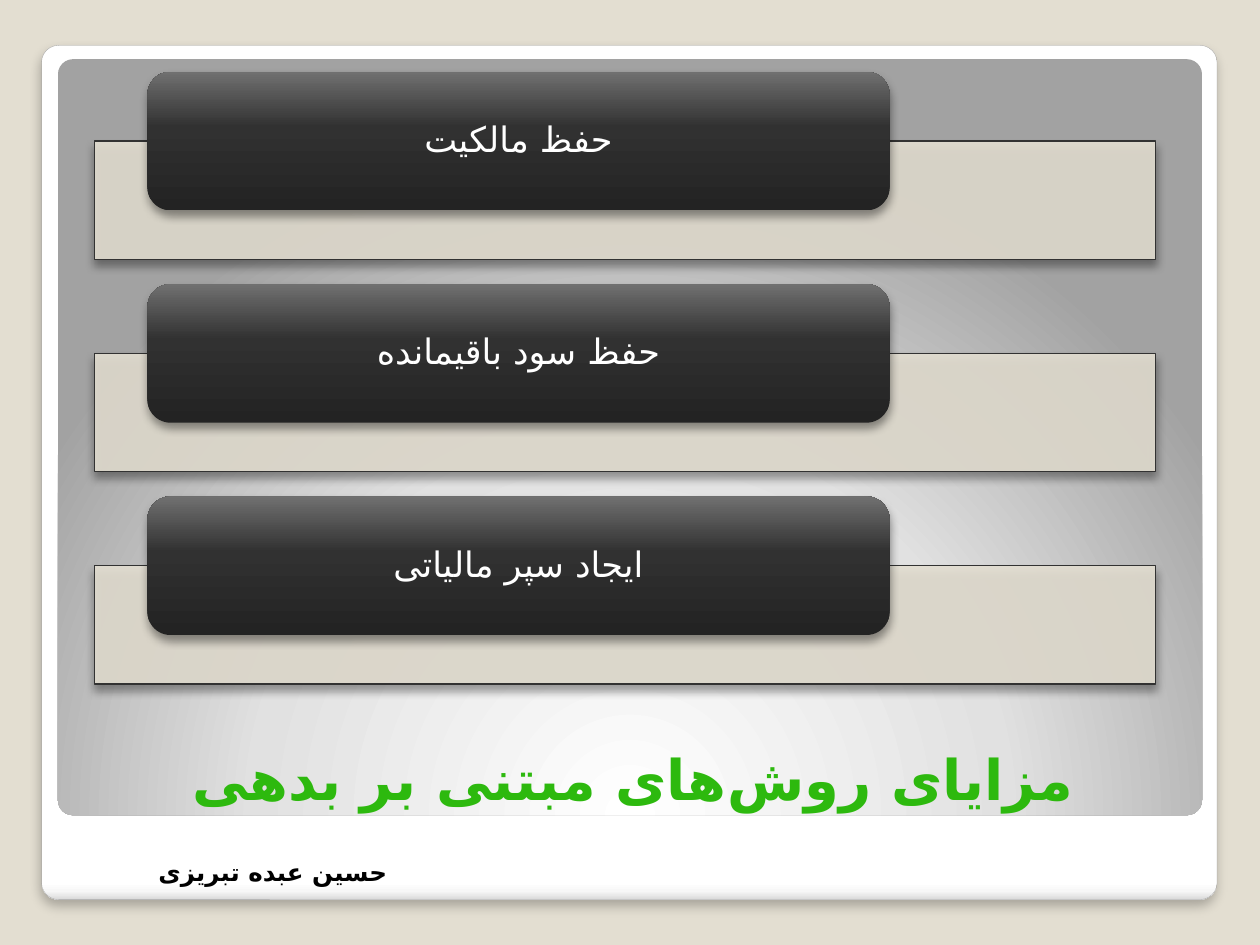
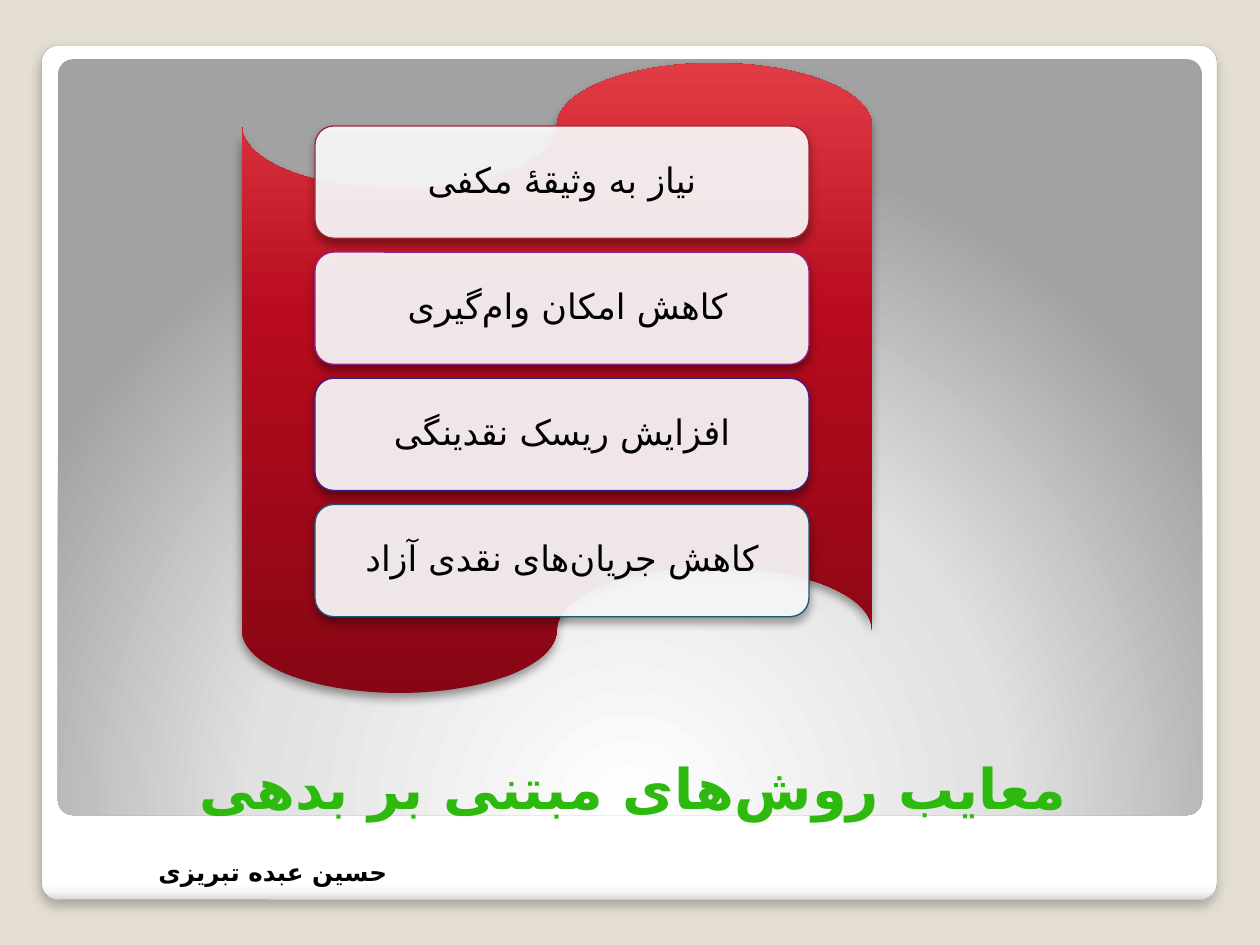
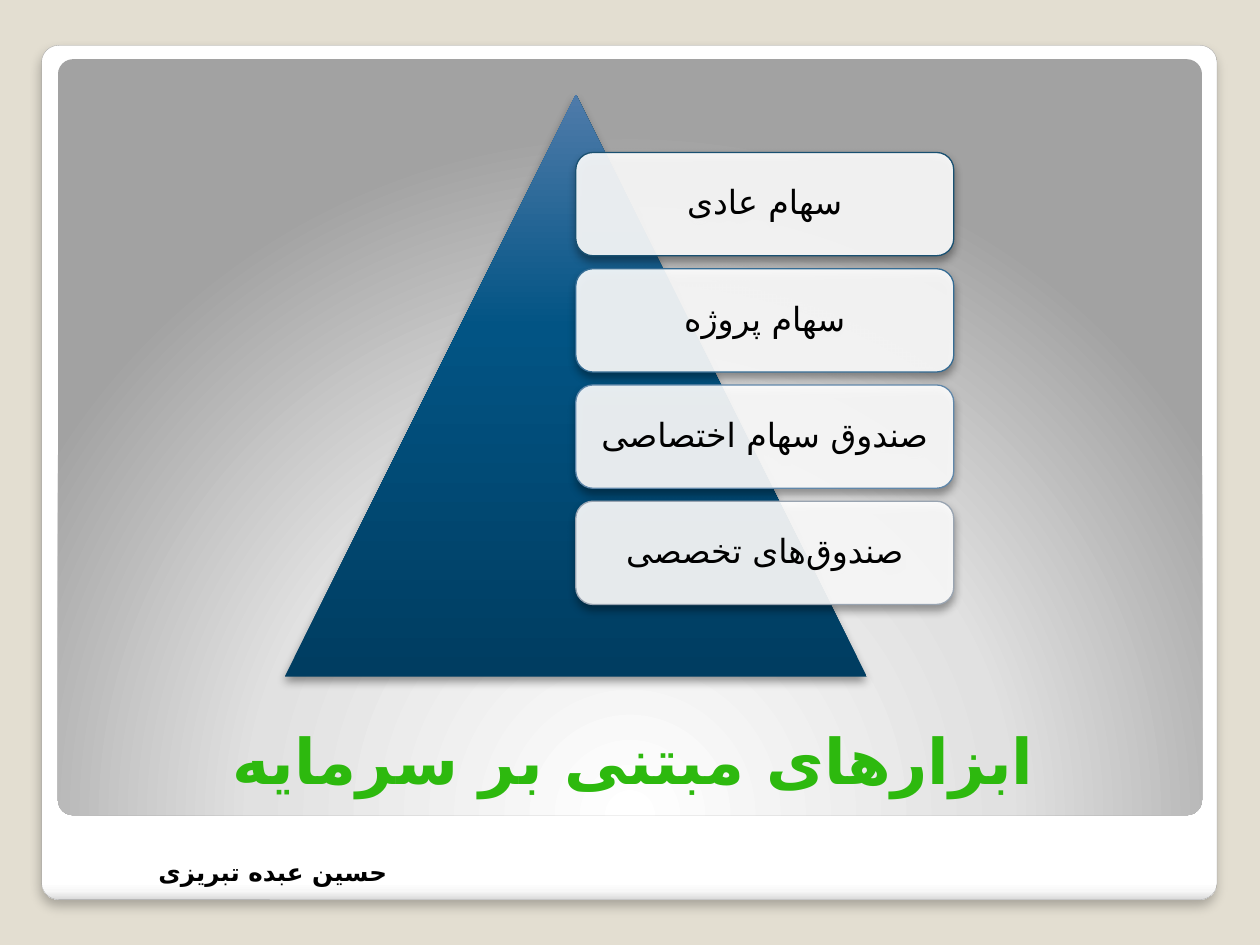
"""Three Persian slides on financing with debt and with equity."""
from pptx import Presentation
from pptx.dml.color import RGBColor
from pptx.enum.shapes import MSO_SHAPE
from pptx.enum.text import MSO_ANCHOR, PP_ALIGN
from pptx.oxml import parse_xml
from pptx.oxml.ns import nsdecls, qn
from pptx.util import Inches, Pt

RECT, ROUND = MSO_SHAPE.RECTANGLE, MSO_SHAPE.ROUNDED_RECTANGLE
TAPE, TRIANGLE = MSO_SHAPE.FLOWCHART_PUNCHED_TAPE, MSO_SHAPE.ISOSCELES_TRIANGLE
MIDDLE, CENTER = MSO_ANCHOR.MIDDLE, PP_ALIGN.CENTER

SAND = RGBColor(0xE3, 0xDE, 0xD1)
WHITE = RGBColor(0xFF, 0xFF, 0xFF)
BLACK = RGBColor(0, 0, 0)
GREEN = RGBColor(0x2D, 0xB9, 0x0E)
CHARCOAL = RGBColor(0x32, 0x32, 0x32)
FRAME_GREY = RGBColor(0xA4, 0xA4, 0xA4)

FONT, PILL_FONT = "DejaVu Sans", "DejaVu Sans Mono"
FRAME_STOPS = [(0, "FFFFFF"), (98, "FFFFFF"), (99, "F7F7F7"), (100, "DADADA")]
PANEL_STOPS = [(0, "FFFFFF"), (55, "E1E1E1"), (100, "A2A2A2")]
PILL_STOPS = [(0, "232323"), (60, "313131"), (100, "707070")]
RED_STOPS = [(0, "870614"), (60, "B80B1E"), (100, "E13C45")]
BLUE_STOPS = [(0, "003D61"), (60, "025484"), (100, "4F7BAA")]
DOWN, UP = '<a:lin ang="5400000" scaled="0"/>', '<a:lin ang="16200000" scaled="0"/>'
GLOW = '<a:path path="circle"><a:fillToRect l="50000" t="175000" r="50000" b="-75000"/></a:path>'
FRAME_SHADOW, SHADOW = (25, 6, 4), (40, 5.2, 3)

HALF_SPACE_MARK, HALF_SPACE = "|", chr(0x200C)
AUTHOR = "حسین عبده تبریزی"
BENEFITS = ["حفظ مالکیت", "حفظ سود باقیمانده", "ایجاد سپر مالیاتی"]
PILL_PITCH = 3.37 / 2
SLIDES = [
    {"title": "مزایای روش|های مبتنی بر بدهی", "top": 5.6, "size": 32},
    {"title": "معایب روش|های مبتنی بر بدهی", "top": 5.67, "size": 32,
     "backdrop": (TAPE, (1.92, 0.5, 5, 5), RED_STOPS),
     "first_card": (2.5, 1, 3.92, 0.89), "card_size": 20,
     "cards": [("نیاز به وثیقۀ مکفی", "9F2936"), ("کاهش امکان وام|گیری ", "94248E"),
               ("افزایش ریسک نقدینگی", "351F88"), ("کاهش جریان|های نقدی آزاد", "1B587C")]},
    {"title": "ابزارهای مبتنی بر سرمایه", "top": 5.45, "size": 36,
     "backdrop": (TRIANGLE, (2.26, 0.75, 4.62, 4.62), BLUE_STOPS),
     "first_card": (4.57, 1.21, 3, 0.82), "card_size": 19,
     "cards": [("سهام عادی", "195071"), ("سهام پروژه", "356C94"),
               ("صندوق سهام اختصاصی", "6087AA"), ("صندوق|های تخصصی", "99A4B1")]},
]


def add_box(s, kind, box, line=None, width=0.75, shadow=None):
    sp = s.shapes.add_shape(kind, *map(Inches, box))
    if line is None:
        sp.line.fill.background()
    else:
        sp.line.color.rgb = line
        sp.line.width = Pt(width)
    sp.shadow.inherit = False
    if shadow:
        alpha, blur, dist = shadow
        sp._element.spPr.find(qn("a:effectLst")).append(parse_xml(
            f'<a:outerShdw {nsdecls("a")} blurRad="{Pt(blur)}" dist="{Pt(dist)}" dir="5400000" '
            f'rotWithShape="0"><a:srgbClr val="000000"><a:alpha val="{alpha * 1000}"/>'
            '</a:srgbClr></a:outerShdw>'))
    return sp


def fill_gradient(sp, stops, direction):
    sp.fill.background()
    spPr = sp._element.spPr
    marks = "".join(f'<a:gs pos="{pos * 1000}"><a:srgbClr val="{color}"/></a:gs>'
                    for pos, color in stops)
    spPr.replace(spPr.find(qn("a:noFill")), parse_xml(
        f'<a:gradFill {nsdecls("a")} rotWithShape="1"><a:gsLst>{marks}</a:gsLst>'
        f'{direction}</a:gradFill>'))


def fill_translucent(sp, color):
    sp.fill.solid()
    sp.fill.fore_color.rgb = color
    clr = sp._element.spPr.find(qn("a:solidFill")).find(qn("a:srgbClr"))
    clr.append(parse_xml(f'<a:alpha {nsdecls("a")} val="90000"/>'))


def write(sp, text, size, color, bold=False, font=FONT, spacing=None, inset=None):
    tf = sp.text_frame
    tf.word_wrap = True
    if inset is not None:
        tf.margin_left = tf.margin_right = Inches(inset)
        tf.margin_top = tf.margin_bottom = Inches(0)
    p = tf.paragraphs[0]
    p.text = text.replace(HALF_SPACE_MARK, HALF_SPACE)
    p.alignment = CENTER
    p.line_spacing = spacing
    p._p.get_or_add_pPr().set("rtl", "1")
    r = p.runs[0]
    r.font.size, r.font.bold, r.font.name = Pt(size), bold, font
    r.font.color.rgb = color
    r._r.get_or_add_rPr().append(parse_xml(f'<a:cs {nsdecls("a")} typeface="{FONT}"/>'))


def add_base(prs, title, top, size):
    s = prs.slides.add_slide(prs.slide_layouts[6])
    frame = add_box(s, ROUND, (0.33, 0.36, 9.33, 6.78), FRAME_GREY, 0.16, FRAME_SHADOW)
    fill_gradient(frame, FRAME_STOPS, DOWN)
    panel = add_box(s, ROUND, (0.46, 0.47, 9.08, 6))
    fill_gradient(panel, PANEL_STOPS, GLOW)
    for sp in (frame, panel):
        sp.adjustments[0] = 0.02
    footer = s.shapes.add_textbox(*map(Inches, (0.58, 6.75, 3.17, 0.34)))
    write(footer, AUTHOR, 14, BLACK, bold=True)
    heading = s.shapes.add_textbox(*map(Inches, (0.55, top, 8.95, 1.15)))
    heading.text_frame.vertical_anchor = MIDDLE
    write(heading, title, size, GREEN, bold=True)
    return s


def add_pills(s):
    for i, text in enumerate(BENEFITS):
        y = i * PILL_PITCH
        bar = add_box(s, RECT, (0.75, 1.12 + y, 8.42, 0.94), CHARCOAL, shadow=SHADOW)
        fill_translucent(bar, SAND)
        pill = add_box(s, ROUND, (1.17, 0.57 + y, 5.89, 1.1), shadow=SHADOW)
        fill_gradient(pill, PILL_STOPS, UP)
        write(pill, text, 20, WHITE, font=PILL_FONT, spacing=0.9, inset=0.22)


def add_cards(s, slide):
    kind, box, stops = slide["backdrop"]
    fill_gradient(add_box(s, kind, box, shadow=SHADOW), stops, UP)
    x, y, w, h = slide["first_card"]
    for i, (text, color) in enumerate(slide["cards"]):
        card = add_box(s, ROUND, (x, y + i * h * 9 / 8, w, h),
                       RGBColor.from_string(color), shadow=SHADOW)
        fill_translucent(card, WHITE)
        write(card, text, slide["card_size"], BLACK, spacing=0.9, inset=0.08)


def main():
    prs = Presentation()
    prs.slide_width, prs.slide_height = Inches(10), Inches(7.5)
    background = prs.slide_master.background.fill
    background.solid()
    background.fore_color.rgb = SAND
    for slide in SLIDES:
        s = add_base(prs, slide["title"], slide["top"], slide["size"])
        if "cards" in slide:
            add_cards(s, slide)
        else:
            add_pills(s)
    prs.save("out.pptx")


if __name__ == "__main__":
    main()
